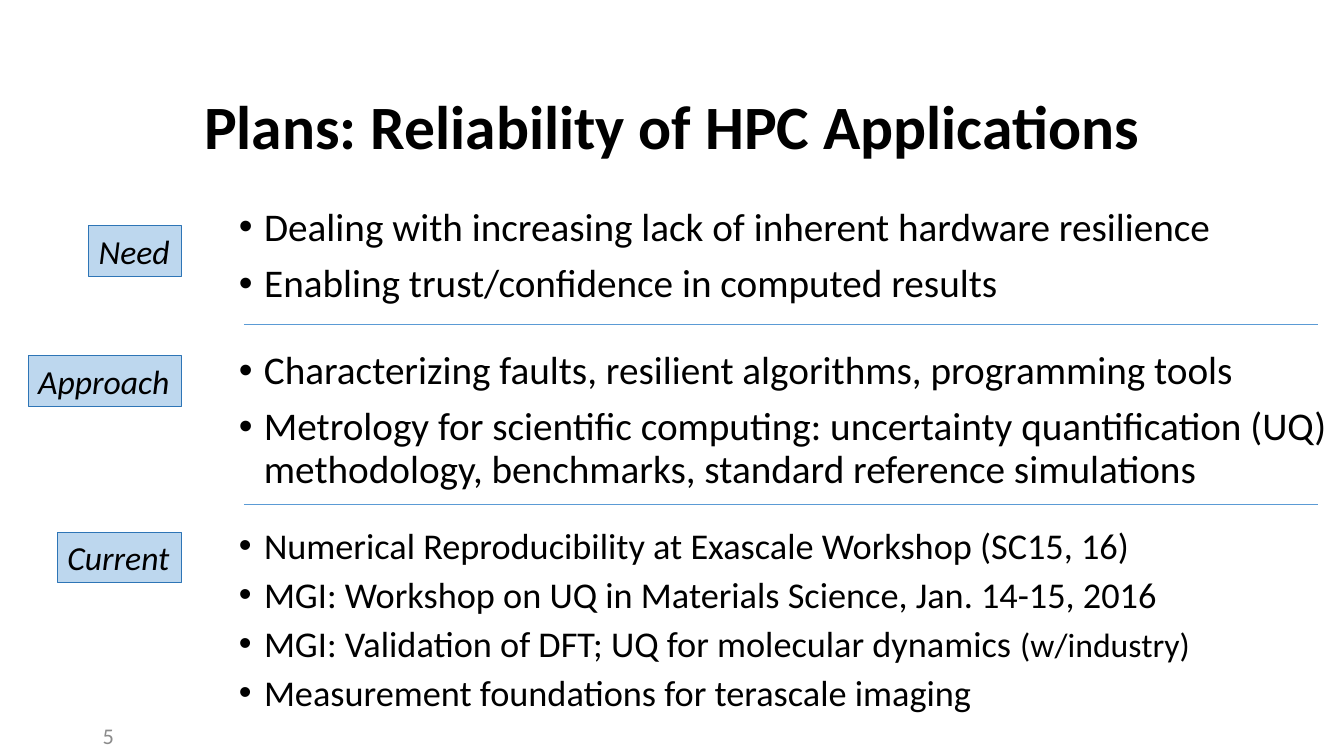
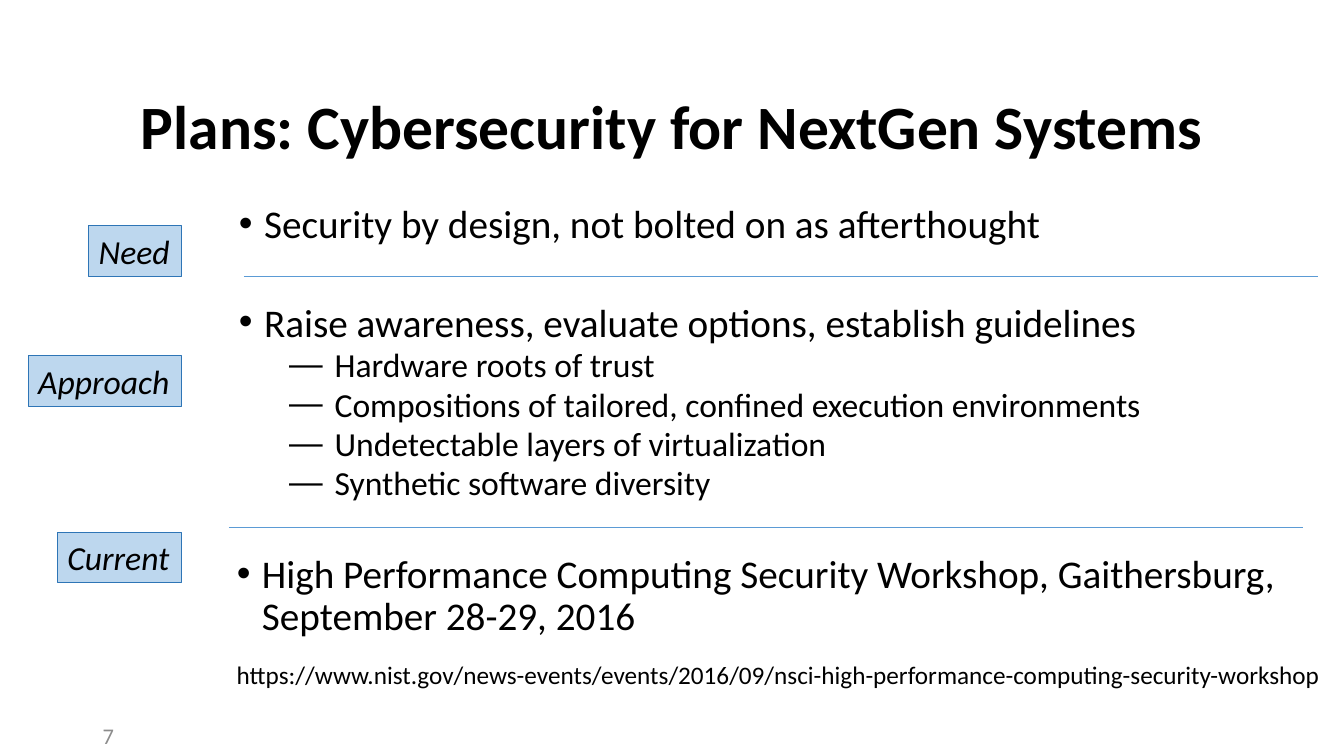
from lxml import etree
from pptx import Presentation
from pptx import util as u
from pptx.dml.color import RGBColor
from pptx.enum import shapes, text
from pptx.oxml.ns import qn

COLORS = {
    "text": "000000",
    "number": "8C8C8C",
    "label_fill": "BDD7EE",
    "label_line": "2E75B6",
    "rule": "5B9BD5",
}
FONT = "Calibri"
LABEL_RIGHT = 1.8
LABELS = [("Need", 2.24, 0.92), ("Current", 5.28, 1.23), ("Approach", 3.53, 1.52)]
RULE_WIDTH = 10.65
BULLETS = [("•", 0.25, 0.25, 10), ("—", 0.95, 0.45, 5)]


def rgb(name):
    return RGBColor.from_string(COLORS[name])


def place(shape, box):
    shape.left, shape.top, shape.width, shape.height = map(u.Inches, box)


def add_span(para, words, size=28, color="text", bold=False, italic=False):
    span = para.add_run()
    span.text = words
    font = span.font
    font.name, font.size = FONT, u.Pt(size)
    font.bold, font.italic = bold, italic
    font.color.rgb = rgb(color)


def write_line(shape, words, anchor=text.MSO_ANCHOR.TOP, align=text.PP_ALIGN.LEFT,
               spacing=1.0, wrap=True, fit=False, **style):
    frame = shape.text_frame
    frame.word_wrap = wrap
    frame.auto_size = text.MSO_AUTO_SIZE.SHAPE_TO_FIT_TEXT if fit else text.MSO_AUTO_SIZE.NONE
    frame.vertical_anchor = anchor
    para = frame.paragraphs[0]
    para.alignment, para.line_spacing = align, spacing
    add_span(para, words, **style)


def set_bullet(para, level):
    mark, margin, hang, _ = BULLETS[level]
    para.level = level
    props = para._p.get_or_add_pPr()
    props.set("marL", str(u.Inches(margin)))
    props.set("indent", str(-u.Inches(hang)))
    etree.SubElement(props, qn("a:buFont")).set("typeface", "Arial")
    etree.SubElement(props, qn("a:buChar")).set("char", mark)


def write_list(shape, box, items, spacing=0.9):
    place(shape, box)
    frame = shape.text_frame
    frame.word_wrap = True
    frame.auto_size = text.MSO_AUTO_SIZE.NONE
    frame.vertical_anchor = text.MSO_ANCHOR.TOP
    for index, (level, *spans) in enumerate(items):
        para = frame.add_paragraph() if index else frame.paragraphs[0]
        set_bullet(para, level)
        para.alignment = text.PP_ALIGN.LEFT
        para.line_spacing = spacing
        para.space_before = u.Pt(BULLETS[level][3] if index else 0)
        for words, size in spans:
            add_span(para, words, size=size)


def add_box(page, box):
    return page.shapes.add_textbox(*map(u.Inches, box))


def add_label(page, words, top, width):
    box = (LABEL_RIGHT - width, top, width, 0.5)
    label = page.shapes.add_shape(shapes.MSO_SHAPE.RECTANGLE, *map(u.Inches, box))
    label.shadow.inherit = False
    label.fill.solid()
    label.fill.fore_color.rgb = rgb("label_fill")
    label.line.color.rgb = rgb("label_line")
    label.line.width = u.Pt(0.75)
    write_line(label, words, wrap=False, fit=True, size=24, italic=True)


def add_rule(page, left, top):
    ends = map(u.Inches, (left, top, left + RULE_WIDTH, top))
    rule = page.shapes.add_connector(shapes.MSO_CONNECTOR.STRAIGHT, *ends)
    rule.line.color.rgb = rgb("rule")
    rule.line.width = u.Pt(0.5)
    etree.SubElement(rule._element.spPr, qn("a:effectLst"))


def add_plan(deck, title, number, sections, rules):
    page = deck.slides.add_slide(deck.slide_layouts[1])
    place(page.shapes.title, (0.92, 0.56, 11.5, 1.45))
    write_line(page.shapes.title, title, anchor=text.MSO_ANCHOR.MIDDLE,
               align=text.PP_ALIGN.CENTER, spacing=0.9, size=44, bold=True)
    write_line(add_box(page, (0.92, 7.1, 3, 0.4)), number,
               anchor=text.MSO_ANCHOR.MIDDLE, size=16, color="number")
    for label in LABELS:
        add_label(page, *label)
    for index, (box, spacing, items) in enumerate(sections):
        shape = add_box(page, box) if index else page.placeholders[1]
        write_list(shape, box, items, spacing)
    for left, top in rules:
        add_rule(page, left, top)
    return page


def build_reliability(deck):
    need = [
        (0, ("Dealing with increasing lack of inherent hardware resilience", 28)),
        (0, ("Enabling trust/confidence in computed results", 28)),
    ]
    approach = [
        (0, ("Characterizing faults, resilient algorithms, programming tools", 28)),
        (0, ("Metrology for scientific computing: uncertainty quantification (UQ) "
             "methodology, benchmarks, standard reference simulations", 28)),
    ]
    current = [
        (0, ("Numerical Reproducibility at Exascale Workshop (SC15, 16)", 25.9)),
        (0, ("MGI: Workshop on UQ in Materials Science, Jan. 14-15, 2016", 25.9)),
        (0, ("MGI: Validation of DFT; UQ for molecular dynamics ", 25.9), ("(w/industry)", 24.1)),
        (0, ("Measurement foundations for terascale imaging", 25.9)),
    ]
    sections = [
        ((2.27, 2.01, 10.65, 1.21), 0.9, need),
        ((2.27, 3.43, 11.06, 1.6), 0.9, approach),
        ((2.27, 5.23, 10.65, 2.06), 0.8, current),
    ]
    add_plan(deck, "Plans: Reliability of HPC Applications", "5", sections,
             [(2.42, 3.22), (2.42, 5)])


def build_cybersecurity(deck):
    need = [(0, ("Security by design, not bolted on as afterthought", 28))]
    approach = [
        (0, ("Raise awareness, evaluate options, establish guidelines", 28)),
        (1, ("Hardware roots of trust", 24)),
        (1, ("Compositions of tailored, confined execution environments", 24)),
        (1, ("Undetectable layers of virtualization", 24)),
        (1, ("Synthetic software diversity", 24)),
    ]
    current = [(0, ("High Performance Computing Security Workshop, Gaithersburg, "
                    "September 28-29, 2016", 28))]
    sections = [
        ((2.27, 1.98, 10.65, 0.59), 0.9, need),
        ((2.27, 3, 10.65, 2.23), 0.8, approach),
        ((2.25, 5.45, 10.65, 1.07), 0.9, current),
    ]
    page = add_plan(deck, "Plans: Cybersecurity for NextGen Systems", "7", sections,
                    [(2.42, 2.74), (2.27, 5.23)])
    write_line(
        add_box(page, (2.25, 6.49, 11.07, 0.4)),
        "https://www.nist.gov/news-events/events/2016/09/"
        "nsci-high-performance-computing-security-workshop",
        wrap=False, fit=True, size=18)


def main():
    deck = Presentation()
    deck.slide_width, deck.slide_height = u.Inches(13.33), u.Inches(7.5)
    build_reliability(deck)
    build_cybersecurity(deck)
    deck.save("out.pptx")


if __name__ == "__main__":
    main()
